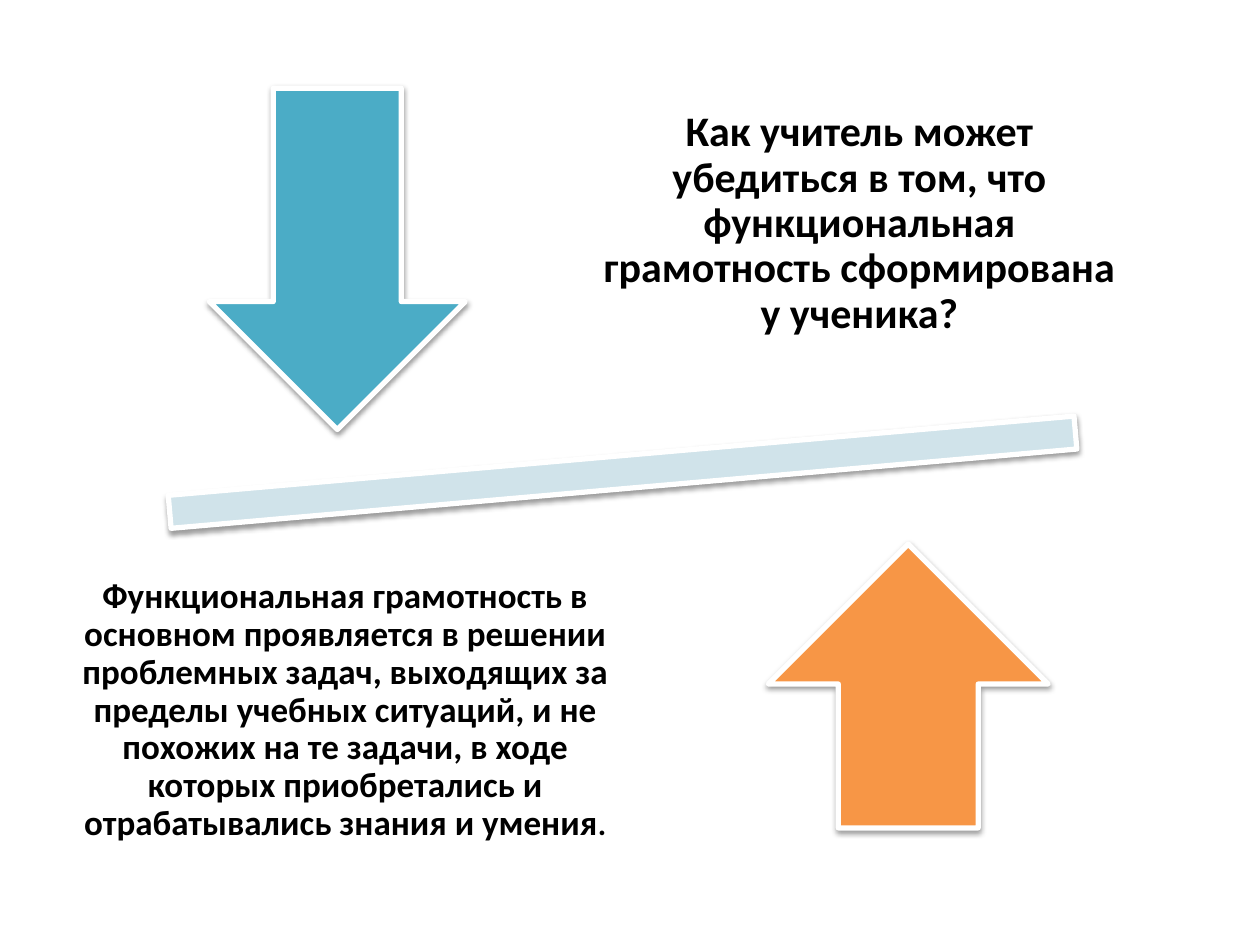
"""Build a balance slide with two arrows, a tilted bar and two statements."""
import lxml.etree
import pptx
import pptx.dml.color
import pptx.enum.shapes
import pptx.enum.text
import pptx.oxml
import pptx.oxml.ns
import pptx.util

Cm = pptx.util.Cm
Pt = pptx.util.Pt
SHAPES = pptx.enum.shapes.MSO_SHAPE


def color(value):
    return pptx.dml.color.RGBColor.from_string(value)


def add_shadow(shape):
    shape.shadow.inherit = False
    effects = shape._element.spPr.find(pptx.oxml.ns.qn("a:effectLst"))
    effects.append(pptx.oxml.parse_xml(
        f'<a:outerShdw {pptx.oxml.ns.nsdecls("a")} blurRad="{Pt(3.1)}" '
        f'dist="{Pt(1.6)}" dir="5400000" rotWithShape="0">'
        '<a:srgbClr val="000000"><a:alpha val="38000"/></a:srgbClr></a:outerShdw>'
    ))


presentation = pptx.Presentation()
presentation.slide_width = Cm(25.4)
presentation.slide_height = Cm(19.05)
slide = presentation.slides.add_slide(presentation.slide_layouts[6])

balance_parts = [
    (SHAPES.MATH_MINUS, (0.08, 8.1, 24.94, 2.84), 355, "D0E3EA"),
    (SHAPES.DOWN_ARROW, (4.22, 1.78, 5.16, 6.88), 0, "4BACC6"),
    (SHAPES.UP_ARROW, (15.49, 10.97, 5.64, 5.72), 0, "F79646"),
]
for kind, box, rotation, fill in balance_parts:
    shape = slide.shapes.add_shape(kind, *map(Cm, box))
    shape.rotation = rotation
    shape.fill.solid()
    shape.fill.fore_color.rgb = color(fill)
    shape.line.color.rgb = color("FFFFFF")
    shape.line.width = Pt(3)
    add_shadow(shape)

statements = [
    ((11.51, 0.91, 11.63, 7.21), 0.48, [
        ("Как учитель может убедиться в том, что функциональная "
         "грамотность сформирована у ученика?", 24),
    ]),
    ((0.89, 10.34, 12.14, 7.98), 0.41, [
        ("Функциональная грамотность в основном проявляется в решении "
         "проблемных задач, выходящих за пределы учебных ситуаций, и не "
         "похожих на те задачи, в ходе которых приобретались и "
         "отрабатывались знания и умения", 20),
        (".", 18),
    ]),
]
for box, inset, pieces in statements:
    text_frame = slide.shapes.add_textbox(*map(Cm, box)).text_frame
    text_frame.word_wrap = True
    text_frame.vertical_anchor = pptx.enum.text.MSO_ANCHOR.MIDDLE
    text_frame.margin_left = text_frame.margin_right = Cm(inset)
    text_frame.margin_top = text_frame.margin_bottom = Cm(inset)
    paragraph = text_frame.paragraphs[0]
    paragraph.alignment = pptx.enum.text.PP_ALIGN.CENTER
    paragraph.line_spacing = 0.9
    paragraph.space_after = Pt(0.35 * pieces[0][1])
    for text, size in pieces:
        run = paragraph.add_run()
        run.text = text
        run.font.name = "Calibri"
        run.font.size = Pt(size)
        run.font.bold = True
        run.font.color.rgb = color("000000")

presentation.save("out.pptx")
